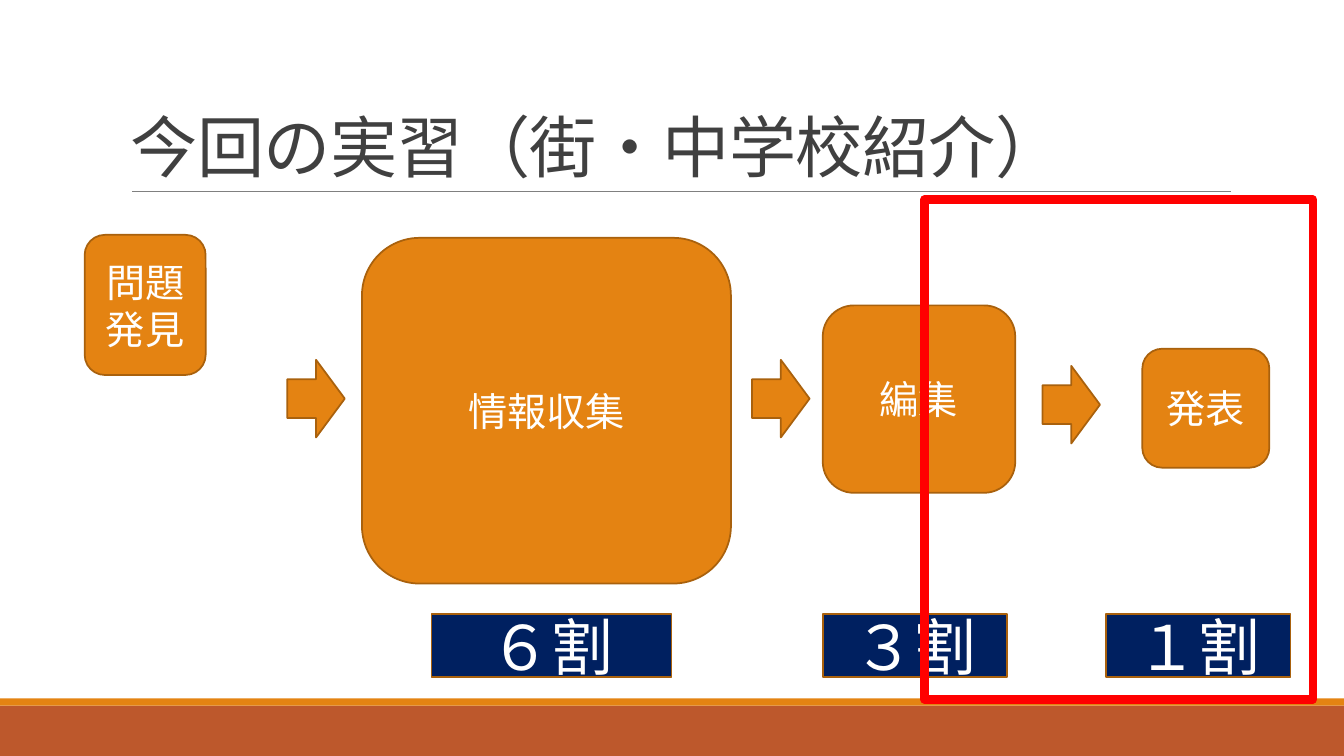
from lxml import etree
from pptx import Presentation
from pptx.dml.color import RGBColor
from pptx.enum.shapes import MSO_CONNECTOR, MSO_SHAPE
from pptx.enum.text import MSO_ANCHOR, PP_ALIGN
from pptx.oxml.ns import qn
from pptx.util import Pt

PX = 9144  # EMU, 100 px to the inch
FONT = "Calibri"
COLORS = {
    "orange": "E48312",
    "outline": "A9610D",
    "rust": "BD582C",
    "navy": "002060",
    "title": "404040",
    "rule": "808080",
    "highlight": "FF0000",
    "white": "FFFFFF",
}

# label, left, top, width, height
STEPS = [
    ("問題発見", 84, 233, 120, 139),
    ("情報収集", 359, 236, 366, 343),
    ("編集", 816, 303, 191, 186),
    ("発表", 1133, 346, 126, 118),
]
ARROWS = [(285, 357), (746, 357), (1034, 363)]  # left, top
SHARES = [("６割", 428, 238), ("３割", 816, 183), ("１割", 1097, 183)]  # label, left, width


def color(name):
    return RGBColor.from_string(COLORS[name])


def emu(*lengths):
    return [length * PX for length in lengths]


def add_box(slide, preset, box, fill=None, line=None, line_width=1.25):
    shape = slide.shapes.add_shape(preset, *emu(*box))
    shape.shadow.inherit = False
    if fill:
        shape.fill.solid()
        shape.fill.fore_color.rgb = color(fill)
    else:
        shape.fill.background()
    if line:
        shape.line.color.rgb = color(line)
        shape.line.width = Pt(line_width)
    else:
        shape.line.fill.background()
    return shape


def add_run(paragraph, text, size, color_name):
    run = paragraph.add_run()
    run.text = text
    run.font.name = FONT
    run.font.size = Pt(size)
    run.font.color.rgb = color(color_name)
    return run


def add_labelled_box(slide, preset, box, fill, text, size):
    shape = add_box(slide, preset, box, fill, "outline")
    frame = shape.text_frame
    frame.word_wrap = True
    frame.vertical_anchor = MSO_ANCHOR.MIDDLE
    paragraph = frame.paragraphs[0]
    paragraph.alignment = PP_ALIGN.CENTER
    add_run(paragraph, text, size, "white")


def add_title(slide, text):
    frame = slide.shapes.add_textbox(*emu(120, 31, 1100, 159)).text_frame
    frame.word_wrap = True
    frame.vertical_anchor = MSO_ANCHOR.BOTTOM
    paragraph = frame.paragraphs[0]
    paragraph.line_spacing = 0.85
    run = add_run(paragraph, text, 48, "title")
    run.font._element.set("spc", "-50")


def add_rule(slide, left, right, top):
    rule = slide.shapes.add_connector(MSO_CONNECTOR.STRAIGHT, *emu(left, top, right, top))
    rule.line.color.rgb = color("rule")
    rule.line.width = Pt(0.5)
    etree.SubElement(rule._element.spPr, qn("a:effectLst"))


def main():
    presentation = Presentation()
    presentation.slide_width, presentation.slide_height = emu(1333, 750)
    slide = presentation.slides.add_slide(presentation.slide_layouts[6])

    add_box(slide, MSO_SHAPE.RECTANGLE, (0, 700, 1333, 50), "rust")
    add_box(slide, MSO_SHAPE.RECTANGLE, (0, 693, 1333, 7), "orange")
    add_rule(slide, 131, 1221, 190)
    add_title(slide, "今回の実習（街・中学校紹介）")

    for label, *box in STEPS:
        add_labelled_box(slide, MSO_SHAPE.ROUNDED_RECTANGLE, box, "orange", label, 28)
    for left, top in ARROWS:
        add_box(slide, MSO_SHAPE.RIGHT_ARROW, (left, top, 57, 77), "orange", "outline")
    for label, left, width in SHARES:
        add_labelled_box(slide, MSO_SHAPE.RECTANGLE, (left, 609, width, 63), "navy", label, 44)

    add_box(slide, MSO_SHAPE.RECTANGLE, (917, 198, 385, 496), line="highlight", line_width=6)
    presentation.save("out.pptx")


if __name__ == "__main__":
    main()
